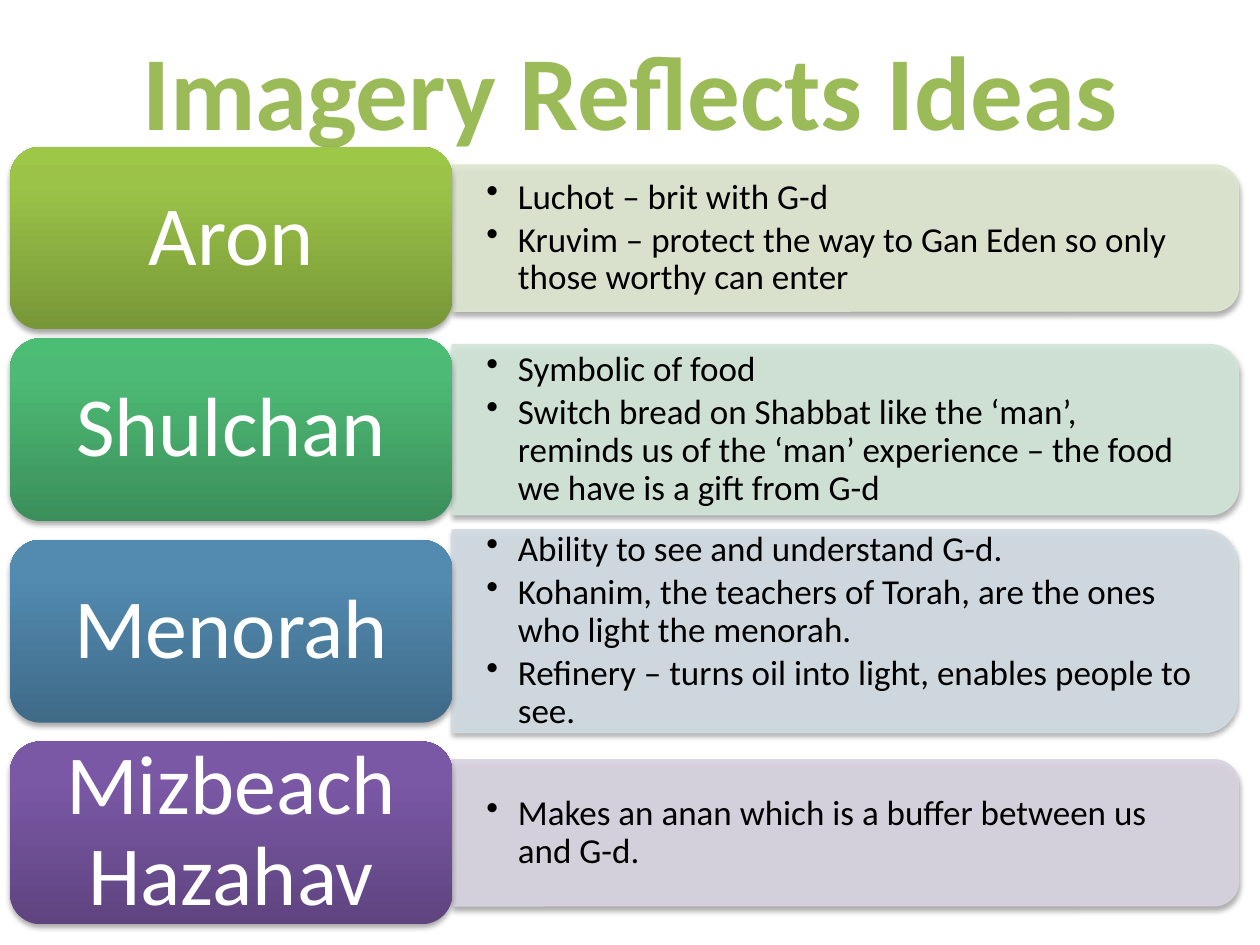
from copy import deepcopy

from lxml.etree import SubElement
from pptx import Presentation
from pptx.dml.color import RGBColor
from pptx.enum.shapes import MSO_SHAPE as SHAPE
from pptx.enum.text import MSO_ANCHOR as ANCHOR, PP_ALIGN as ALIGN
from pptx.oxml.ns import qn
from pptx.util import Inches, Pt

FONT = "Calibri"
TITLE = "Imagery Reflects Ideas"
ROWS = [
    {"label": "Aron", "mid": 1.89, "panel": (6.24, 1.16), "tint": "DEE7D1",
     "grad": ("779737", "9BC348", "9DC746"),
     "ideas": ["Luchot – brit with G-d",
               "Kruvim – protect the way to Gan Eden so only those worthy can enter"]},
    {"label": "Shulchan", "mid": 3.41, "panel": (6.24, 1.35), "tint": "D2E5D9",
     "grad": ("3B8F5A", "4DBA75", "4BBD75"),
     "ideas": ["Symbolic of food",
               "Switch bread on Shabbat like the ‘man’, reminds us of the ‘man’ "
               "experience – the food we have is a gift from G-d"]},
    {"label": "Menorah", "mid": 5.01, "panel": (6.23, 1.61), "tint": "D2DCE2",
     "grad": ("3F6A88", "528AB0", "518BB3"),
     "ideas": ["Ability to see and understand G-d.",
               "Kohanim, the teachers of Torah, are the ones who light the menorah.",
               "Refinery – turns oil into light, enables people to see."]},
    {"label": "Mizbeach Hazahav", "mid": 6.61, "panel": (6.24, 1.16), "tint": "D8D3E0",
     "grad": ("5F4480", "7B58A6", "7C57A8"),
     "ideas": ["Makes an anan which is a buffer between us and G-d."]},
]
LABEL_X, LABEL_W, LABEL_H = 0.08, 3.51, 1.45
PANEL_X = LABEL_X + LABEL_W


def rgb(code):
    return RGBColor.from_string(code)


def add_run(p, text, size, color, bold=False):
    r = p.add_run()
    r.text = text
    r.font.name, r.font.size, r.font.bold = FONT, Pt(size), bold
    r.font.color.rgb = rgb(color)


def set_frame(tf, dx, dy):
    tf.word_wrap = True
    tf.vertical_anchor = ANCHOR.MIDDLE
    tf.margin_left = tf.margin_right = Inches(dx)
    tf.margin_top = tf.margin_bottom = Inches(dy)


def set_alpha(clr, percent):
    SubElement(clr, qn("a:alpha"), val=str(percent * 1000))


def add_shadow(sp):
    sp.shadow.inherit = False
    effects = sp._element.spPr.find(qn("a:effectLst"))
    shadow = SubElement(effects, qn("a:outerShdw"), blurRad=str(Pt(3.1)),
                        dist=str(Pt(1.8)), dir="5400000", rotWithShape="0")
    set_alpha(SubElement(shadow, qn("a:srgbClr"), val="000000"), 35)


def add_panel(s, row):
    w, h = row["panel"]
    sp = s.shapes.add_shape(SHAPE.ROUND_2_SAME_RECTANGLE,
                            Inches(PANEL_X + (w - h) / 2), Inches(row["mid"] - w / 2),
                            Inches(h), Inches(w))
    sp.rotation = 90
    sp.fill.solid()
    sp.fill.fore_color.rgb = sp.line.color.rgb = rgb(row["tint"])
    sp.line.width = Pt(0.75)
    for clr in sp._element.spPr.iter(qn("a:srgbClr")):
        set_alpha(clr, 90)
    add_shadow(sp)


def add_ideas(s, row):
    w, h = row["panel"][0] - 0.06, row["panel"][1] * 0.9
    box = s.shapes.add_textbox(Inches(PANEL_X), Inches(row["mid"] - h / 2),
                               Inches(w), Inches(h))
    tf = box.text_frame
    set_frame(tf, 0.27, 0.14)
    for i, idea in enumerate(row["ideas"]):
        p = tf.add_paragraph() if i else tf.paragraphs[0]
        p.level, p.line_spacing, p.space_after = 1, 0.9, Pt(3)
        pPr = p._p.get_or_add_pPr()
        pPr.set("marL", str(Inches(0.25)))
        pPr.set("indent", str(Inches(-0.25)))
        SubElement(pPr, qn("a:buChar"), char="•")
        add_run(p, idea, 20, "000000")


def add_label(s, row):
    sp = s.shapes.add_shape(SHAPE.ROUNDED_RECTANGLE, Inches(LABEL_X),
                            Inches(row["mid"] - LABEL_H / 2),
                            Inches(LABEL_W), Inches(LABEL_H))
    sp.fill.gradient()
    sp.fill.gradient_angle = 90
    stop_list = sp._element.spPr.find(".//" + qn("a:gsLst"))
    stop_list.append(deepcopy(stop_list[-1]))
    for stop, pos, color in zip(sp.fill.gradient_stops, (0, 0.8, 1), row["grad"]):
        stop.position = pos
        stop.color.rgb = rgb(color)
    sp.line.fill.background()
    add_shadow(sp)
    set_frame(sp.text_frame, 0.2, 0.1)
    p = sp.text_frame.paragraphs[0]
    p.alignment, p.line_spacing = ALIGN.CENTER, 0.9
    add_run(p, row["label"], 48, "FFFFFF")


def main():
    """Build the slide of labels and the ideas they reflect."""
    prs = Presentation()
    prs.slide_width, prs.slide_height = Inches(10), Inches(7.5)
    s = prs.slides.add_slide(prs.slide_layouts[5])
    title = s.shapes.title
    title.left, title.top = Inches(0), Inches(0.08)
    title.width, title.height = Inches(10), Inches(1.25)
    title.text_frame.vertical_anchor = ANCHOR.MIDDLE
    p = title.text_frame.paragraphs[0]
    p.alignment = ALIGN.CENTER
    add_run(p, TITLE, 60, "9BBB59", True)
    for row in ROWS:
        add_panel(s, row)
        add_ideas(s, row)
        add_label(s, row)
    prs.save("out.pptx")


if __name__ == "__main__":
    main()
